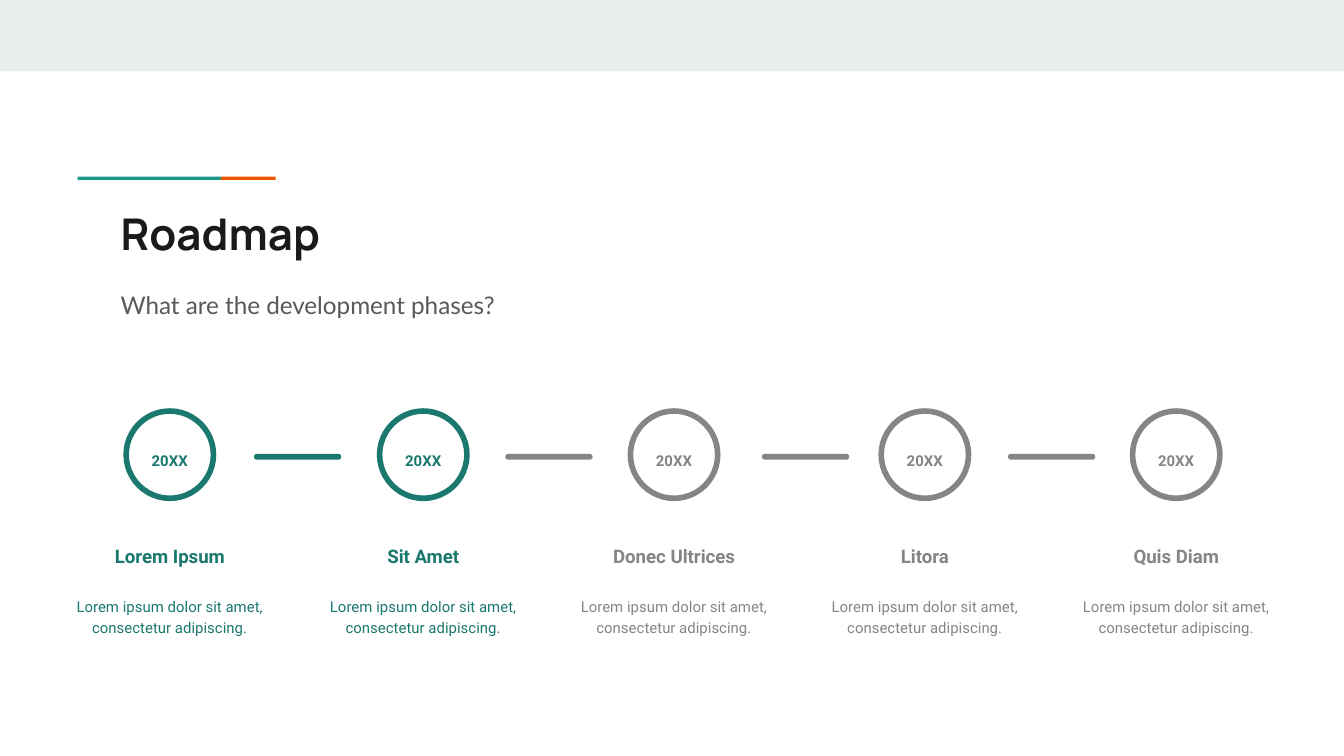
from dataclasses import dataclass

from pptx import Presentation
from pptx import util as u
from pptx.dml.color import RGBColor
from pptx.enum import shapes, text

TEAL, GREY = "1B786F", "858585"
DETAIL = "Lorem ipsum dolor sit amet, consectetur adipiscing."
CIRCLE_SIZE = 1.65
COLUMN_WIDTH = 4.27
YEAR_WIDTH = 1.22
INSET = 0.25


@dataclass
class Phase:
    name: str
    center: float
    color: str
    year: str = "20XX"
    detail: str = DETAIL


@dataclass
class Bar:
    left: float
    color: str


@dataclass
class TextStyle:
    font: dict
    color: str
    paragraph: dict
    frame: dict


PHASES = [
    Phase("Lorem Ipsum", 3.21, TEAL),
    Phase("Sit Amet", 8.0, TEAL),
    Phase("Donec Ultrices", 12.74, GREY),
    Phase("Litora", 17.48, GREY),
    Phase("Quis Diam", 22.23, GREY),
]
BARS = [Bar(4.8, TEAL), Bar(9.55, GREY), Bar(14.4, GREY), Bar(19.05, GREY)]


def rgb(color: str) -> RGBColor:
    return RGBColor.from_string(color)


def set_all(target, values: dict) -> None:
    for name, value in values.items():
        setattr(target, name, value)


def place(left: float, top: float, width: float, height: float) -> list:
    return [u.Cm(length) for length in (left, top, width, height)]


def write(shape, words: str, style: TextStyle) -> None:
    frame = shape.text_frame
    margins = {f"margin_{side}": u.Cm(INSET)
               for side in ("left", "top", "right", "bottom")}
    set_all(frame, {"auto_size": text.MSO_AUTO_SIZE.NONE, "word_wrap": True,
                    "vertical_anchor": text.MSO_ANCHOR.TOP,
                    **margins, **style.frame})
    paragraph = frame.paragraphs[0]
    set_all(paragraph, style.paragraph)
    run = paragraph.add_run()
    run.text = words
    set_all(run.font, style.font)
    run.font.color.rgb = rgb(style.color)


def add_text(slide, box: list, words: str, style: TextStyle) -> None:
    write(slide.shapes.add_textbox(*box), words, style)


def add_filled(slide, kind, box: list, color: str):
    shape = slide.shapes.add_shape(kind, *box)
    shape.shadow.inherit = False
    shape.fill.solid()
    shape.fill.fore_color.rgb = rgb(color)
    shape.line.fill.background()
    return shape


def add_phase(slide, phase: Phase) -> None:
    circle = slide.shapes.add_shape(
        shapes.MSO_SHAPE.OVAL,
        *place(phase.center - CIRCLE_SIZE / 2, 7.77, CIRCLE_SIZE, CIRCLE_SIZE))
    circle.shadow.inherit = False
    circle.fill.background()
    circle.line.color.rgb = rgb(phase.color)
    circle.line.width = u.Pt(3)

    centered = {"alignment": text.PP_ALIGN.CENTER, "line_spacing": 1.15}
    spaced = {**centered, "space_after": u.Pt(16)}
    small = {"name": "Roboto", "size": u.Pt(8)}
    bold = {**small, "bold": True}
    column_left = phase.center - COLUMN_WIDTH / 2

    add_text(slide, place(phase.center - YEAR_WIDTH / 2, 8.23, YEAR_WIDTH, 0.89),
             phase.year,
             TextStyle(bold, phase.color, spaced, {"word_wrap": False}))
    add_text(slide, place(column_left, 9.73, COLUMN_WIDTH, 1.24), phase.name,
             TextStyle({**bold, "size": u.Pt(10)}, phase.color, centered,
                       {"vertical_anchor": text.MSO_ANCHOR.BOTTOM}))
    add_text(slide, place(column_left, 11, COLUMN_WIDTH, 2.06), phase.detail,
             TextStyle(small, phase.color, spaced, {}))


def add_bar(slide, bar: Bar) -> None:
    shape = add_filled(slide, shapes.MSO_SHAPE.ROUNDED_RECTANGLE,
                       place(bar.left, 8.58, 1.65, 0.11), bar.color)
    shape.adjustments[0] = 0.5


def add_heading(slide) -> None:
    """Draw the top band, the two-colour accent, the title and the subtitle."""
    rectangle = shapes.MSO_SHAPE.RECTANGLE
    add_filled(slide, rectangle, place(0, 0, 25.4, 1.35), "E9EDEE")
    add_filled(slide, rectangle, place(1.47, 3.34, 2.71, 0.06), "1A9988")
    add_filled(slide, rectangle, place(4.18, 3.34, 1.03, 0.06), "EB5600")

    title = slide.shapes.title
    set_all(title, dict(zip(("left", "top", "width", "height"),
                            place(2.03, 3.66, 21.36, 1.5))))
    write(title, "Roadmap",
          TextStyle({"name": "Manrope", "size": u.Pt(23.4), "bold": True},
                    "1A1A1A", {"alignment": text.PP_ALIGN.LEFT}, {}))
    add_text(slide, place(2.03, 5.16, 8.71, 1.5),
             "What are the development phases?",
             TextStyle({"name": "Lato", "size": u.Pt(13)}, "595959",
                       {"line_spacing": 1.15, "space_after": u.Pt(12)}, {}))


def main() -> None:
    deck = Presentation()
    deck.slide_width, deck.slide_height = u.Cm(25.4), u.Cm(14.29)
    slide = deck.slides.add_slide(deck.slide_layouts.get_by_name("Title Only"))
    add_heading(slide)
    for phase in PHASES:
        add_phase(slide, phase)
    for bar in BARS:
        add_bar(slide, bar)
    deck.save("out.pptx")


if __name__ == "__main__":
    main()
